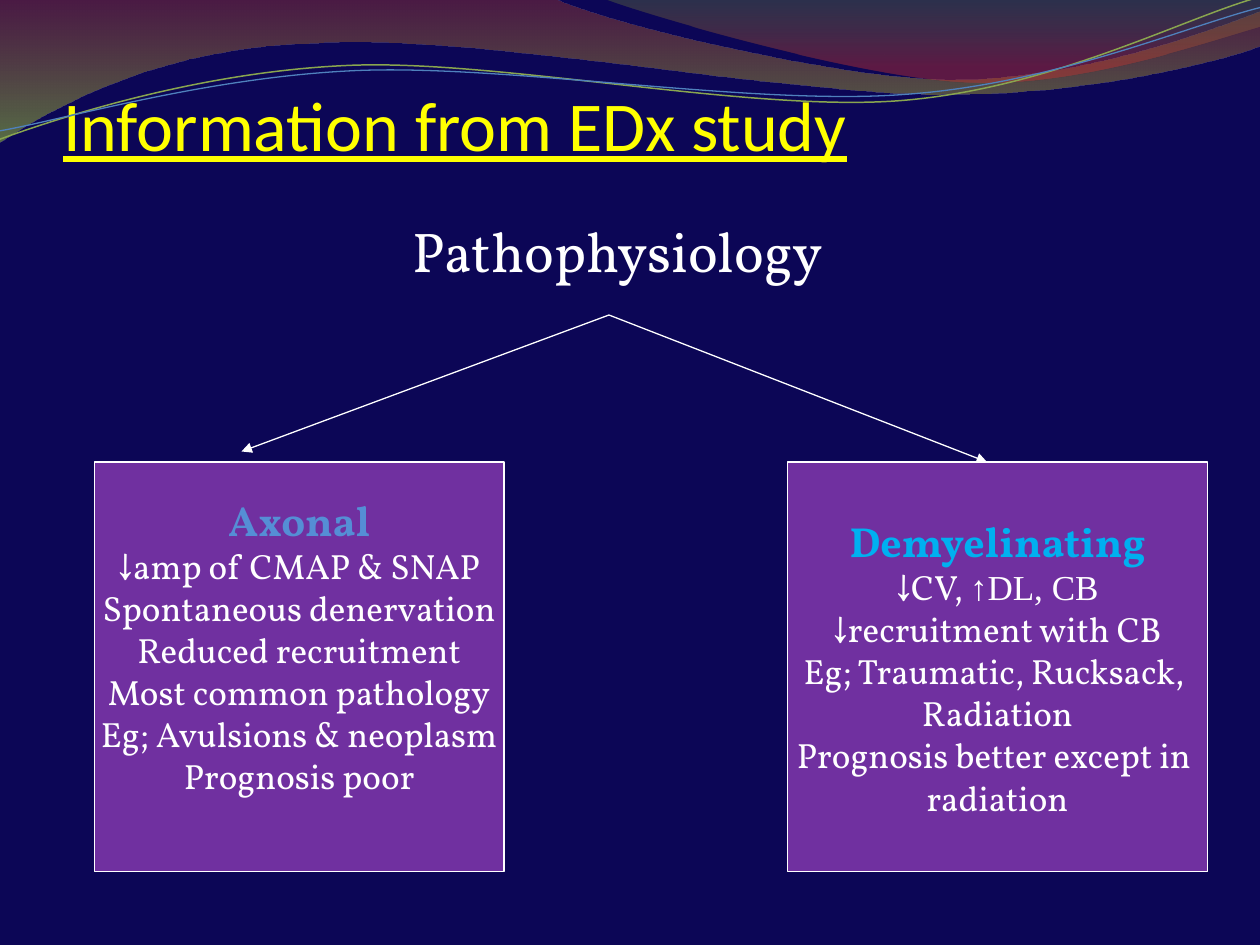
from lxml import etree
from pptx import Presentation
from pptx.dml.color import RGBColor
from pptx.enum.shapes import MSO_CONNECTOR, MSO_SHAPE
from pptx.enum.text import MSO_ANCHOR, PP_ALIGN
from pptx.oxml.ns import qn
from pptx.util import Pt

RECT, STRAIGHT = MSO_SHAPE.RECTANGLE, MSO_CONNECTOR.STRAIGHT
MIDDLE, LEFT, CENTER = MSO_ANCHOR.MIDDLE, PP_ALIGN.LEFT, PP_ALIGN.CENTER

NAVY = RGBColor(0x0C, 0x06, 0x56)
WHITE = RGBColor(0xFF, 0xFF, 0xFF)
YELLOW = RGBColor(0xFF, 0xFF, 0x00)
PURPLE = RGBColor(0x70, 0x30, 0xA0)
STEEL = RGBColor(0x55, 0x8E, 0xD5)
SKY = RGBColor(0x00, 0xB0, 0xF0)
BRICK = RGBColor(0x97, 0x33, 0x30)
LIME = RGBColor(0x95, 0xC2, 0x38)
OLIVE = RGBColor(0x76, 0x95, 0x37)
RED = RGBColor(0xBE, 0x33, 0x30)
GREEN = RGBColor(0x89, 0xA5, 0x4F)
BLUE = RGBColor(0x4F, 0x81, 0xBD)
SERIF, SANS, TIMES = "Vollkorn", "Calibri", "Times New Roman"

TITLE = "Information from EDx study"
TOPIC = "Pathophysiology"

# Each line is a list of (text, font) runs
BOXES = [
    dict(at=(54, 264, 234, 234), heading="Axonal", color=STEEL, bottom=27.6, lines=[
        [("↓amp of CMAP & SNAP", SERIF)],
        [("Spontaneous denervation", SERIF)],
        [("Reduced recruitment", SERIF)],
        [("Most common pathology", SERIF)],
        [("Eg; Avulsions & neoplasm", SERIF)],
        [("Prognosis poor", SERIF)]]),
    dict(at=(450, 264, 240, 234), heading="Demyelinating", color=SKY, bottom=3.6, lines=[
        [("↓CV, ", SERIF), ("↑DL, CB", TIMES)],
        [("↓recruitment with CB", SERIF)],
        [("Eg; Traumatic, Rucksack, ", SERIF)],
        [("Radiation", SERIF)],
        [("Prognosis better except in ", SERIF)],
        [("radiation", SERIF)]]),
]
FORK = (348, 180)
ARROW_TIPS = [(138, 258), (564, 264)]

# Segments in points: 2 numbers are a line end, 6 are a cubic Bézier
BANDS = [
    dict(start=(-0.7, 0), stops=[(0, BRICK, 45), (1, LIME, 55)], segments=[
        (316.8, -0.7), (342.7, 12.2, 478.1, 45.4, 545.8, 45.4),
        (614.2, 45.4, 689.8, 18.7, 720, 6.5), (720.7, 25.9),
        (707.8, 31.7, 626.4, 54.7, 537.1, 54),
        (447.8, 54, 275, 20.2, 185, 24.5),
        (92.9, 25.9, 33.1, 59.8, -0.7, 81.4)]),
    dict(start=(344.9, -0.7), stops=[(0, OLIVE, 30), (0.8, RED, 45)], segments=[
        (366.5, 7.9, 491, 44.6, 553.7, 46.8),
        (616.3, 49.7, 691.9, 23, 720, 15.1), (720, 0)]),
]
WAVES = [
    dict(start=(-1, 79.9), color=GREEN, width=0.85, segments=[
        (34.6, 67, 113.8, 41, 199.4, 37.4), (284.4, 33.8, 427, 64.1, 513.4, 57.6),
        (599.8, 51.1, 675.4, 10.8, 718.6, -1.4)]),
    dict(start=(-1, 74.9), color=BLUE, width=0.75, segments=[
        (33.8, 69.1, 118.1, 43.9, 203.8, 40.3), (290.2, 36.7, 429.8, 60.5, 516.2, 54),
        (601.9, 48.2, 677.5, 15.1, 720, 4.3)]),
]


def add_curve(shapes, start, segments, close):
    """Build the outline through the segment ends, then bend its Bézier parts."""
    builder = shapes.build_freeform(*map(Pt, start), scale=1.0)
    builder.add_line_segments([tuple(map(Pt, seg[-2:])) for seg in segments], close=close)
    sp = builder.convert_to_shape()
    sp.shadow.inherit = False
    for side, seg in zip(list(sp._element.iter(qn("a:lnTo"))), segments):
        if len(seg) == 6:
            curve = etree.Element(qn("a:cubicBezTo"))
            for x, y in zip(seg[::2], seg[1::2]):
                etree.SubElement(curve, qn("a:pt"), x=str(Pt(x) - sp.left),
                                 y=str(Pt(y) - sp.top))
            side.getparent().replace(side, curve)
    return sp


def add_band(shapes, start, segments, stops):
    sp = add_curve(shapes, start, segments, True)
    sp.line.fill.background()
    sp.fill.gradient()
    sp.fill.gradient_angle = 270
    for stop, (position, color, _) in zip(sp.fill.gradient_stops, stops):
        stop.position = position
        stop.color.rgb = color
    for clr, (_, _, opacity) in zip(sp._element.spPr.iter(qn("a:srgbClr")), stops):
        etree.SubElement(clr, qn("a:alpha"), val=str(opacity * 1000))


def set_line(line, color, width):
    line.color.rgb = color
    line.width = Pt(width)


def add_wave(shapes, start, segments, color, width):
    sp = add_curve(shapes, start, segments, False)
    sp.fill.background()
    set_line(sp.line, color, width)


def add_run(p, text, color, **font):
    r = p.add_run()
    r.text = text
    r.font.color.rgb = color
    for name, value in font.items():
        setattr(r.font, name, value)


def set_frame(tf, **values):
    for name, value in values.items():
        setattr(tf, name, value)


def add_arrow(shapes, begin, end):
    arrow = shapes.add_connector(STRAIGHT, *map(Pt, begin + end))
    set_line(arrow.line, WHITE, 0.75)
    props = arrow._element.spPr
    etree.SubElement(props.find(qn("a:ln")), qn("a:tailEnd"), type="triangle")
    etree.SubElement(props, qn("a:effectLst"))


def add_box(shapes, at, heading, color, bottom, lines):
    sp = shapes.add_shape(RECT, *map(Pt, at))
    sp.shadow.inherit = False
    sp.fill.solid()
    sp.fill.fore_color.rgb = PURPLE
    set_line(sp.line, WHITE, 0.75)
    tf = sp.text_frame
    set_frame(tf, word_wrap=False, vertical_anchor=MIDDLE, margin_bottom=Pt(bottom))
    p = tf.paragraphs[0]
    p.alignment = CENTER
    add_run(p, heading, color, name=SERIF, size=Pt(24), bold=True)
    for runs in lines:
        p = tf.add_paragraph()
        p.alignment = CENTER
        for text, font in runs:
            add_run(p, text, WHITE, name=font, size=Pt(20))


def main():
    prs = Presentation()
    prs.slide_width, prs.slide_height = Pt(720), Pt(540)
    slide = prs.slides.add_slide(prs.slide_layouts[5])
    slide.background.fill.solid()
    slide.background.fill.fore_color.rgb = NAVY
    shapes = slide.shapes

    for band in BANDS:
        add_band(shapes, **band)
    for wave in WAVES:
        add_wave(shapes, **wave)

    title = shapes.title
    title.left, title.top, title.width, title.height = map(Pt, (36, 24, 612, 90))
    set_frame(title.text_frame, vertical_anchor=MIDDLE, margin_left=0, margin_right=0,
              margin_top=Pt(3.6), margin_bottom=0)
    p = title.text_frame.paragraphs[0]
    p.alignment = LEFT
    add_run(p, TITLE, YELLOW, name=SANS, size=Pt(40), underline=True)

    topic = shapes.add_textbox(*map(Pt, (42, 120, 622, 50)))
    topic.text_frame.word_wrap = True
    p = topic.text_frame.paragraphs[0]
    p.alignment = CENTER
    add_run(p, TOPIC, WHITE, name=SERIF, size=Pt(32))

    for tip in ARROW_TIPS:
        add_arrow(shapes, FORK, tip)
    for box in BOXES:
        add_box(shapes, **box)
    prs.save("out.pptx")


if __name__ == "__main__":
    main()
